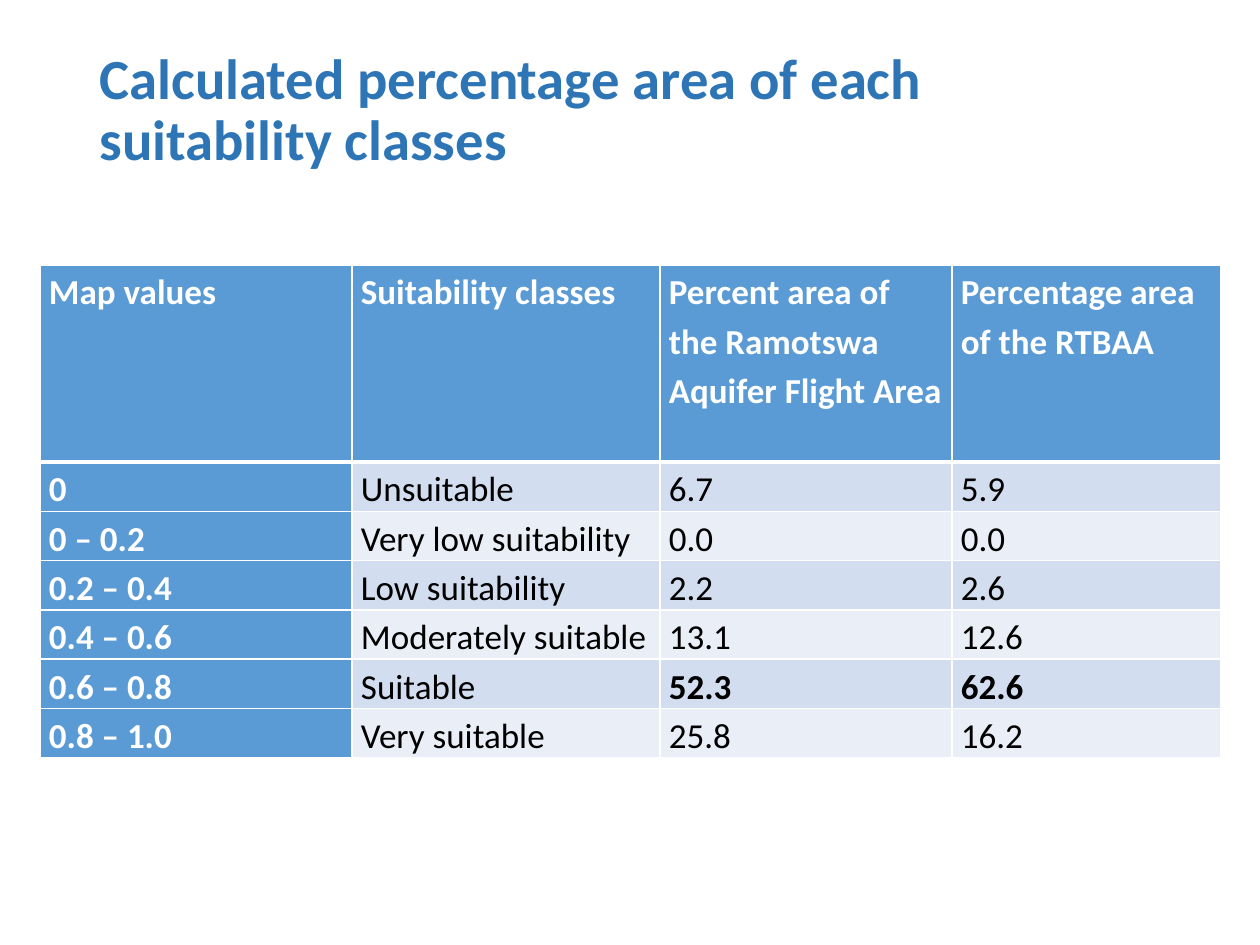
from lxml import etree
from pptx import Presentation
from pptx.dml.color import RGBColor
from pptx.enum import text
from pptx.oxml import ns
from pptx import util as u

# Content
TITLE = "Calculated percentage area of each suitability classes"
HEADER = ("Map values", "Suitability classes",
          "Percent area of the Ramotswa Aquifer Flight Area",
          "Percentage area of the RTBAA")
CLASSES = [
    ("0", "Unsuitable", "6.7", "5.9"),
    ("0 – 0.2", "Very low suitability", "0.0", "0.0"),
    ("0.2 – 0.4", "Low suitability", "2.2", "2.6"),
    ("0.4 – 0.6", "Moderately suitable", "13.1", "12.6"),
    ("0.6 – 0.8", "Suitable", "52.3", "62.6"),
    ("0.8 – 1.0", "Very suitable", "25.8", "16.2"),
]
BOLD_VALUES = {"52.3", "62.6"}

# Layout in px, 126 to the inch
SCALE = u.Inches(1) / 126
TITLE_BOX = (87, 50, 1086, 183)
TABLE_LEFT, TABLE_TOP = 40, 265
COLUMN_WIDTHS = (312, 308, 292, 269)
HEADER_HEIGHT, ROW_HEIGHT = 197, 49
CELL_MARGIN = 9

FONT = "Calibri"
TITLE_BLUE = RGBColor(0x2E, 0x75, 0xB6)
HEADER_BLUE = RGBColor(0x5B, 0x9B, 0xD5)
BANDS = (RGBColor(0xD2, 0xDE, 0xEF), RGBColor(0xEA, 0xEF, 0xF7))
WHITE = RGBColor(0xFF, 0xFF, 0xFF)
BLACK = RGBColor(0, 0, 0)


def px(length):
    return u.Emu(round(length * SCALE))


def set_format(target, values):
    for name, value in values.items():
        setattr(target, name, value)


def set_font(font, size, color, bold):
    set_format(font, {"name": FONT, "size": u.Pt(size), "bold": bold})
    font.color.rgb = color


def add_borders(cell, widths):
    properties = cell._tc.get_or_add_tcPr()
    for side, width in widths.items():
        line = etree.SubElement(properties, ns.qn(f"a:ln{side}"), w=str(u.Pt(width)))
        fill = etree.SubElement(line, ns.qn("a:solidFill"))
        etree.SubElement(fill, ns.qn("a:srgbClr"), val=str(WHITE))


def fill_cell(cell, content, row, column):
    is_header = row == 0
    is_label = is_header or column == 0
    add_borders(cell, {"L": 1, "R": 1, "T": 3 if row == 1 else 1,
                       "B": 3 if is_header else 1})
    cell.fill.solid()
    cell.fill.fore_color.rgb = HEADER_BLUE if is_label else BANDS[(row - 1) % 2]
    set_format(cell, {"margin_left": px(CELL_MARGIN), "margin_right": px(CELL_MARGIN),
                      "margin_top": 0, "margin_bottom": 0,
                      "vertical_anchor": text.MSO_ANCHOR.TOP})
    cell.text = content
    paragraph = cell.text_frame.paragraphs[0]
    wraps = is_header and column >= 2
    paragraph.alignment = text.PP_ALIGN.LEFT if wraps else text.PP_ALIGN.JUSTIFY
    paragraph.line_spacing = 1.15
    set_font(paragraph.runs[0].font, 20, WHITE if is_label else BLACK,
             is_label or content in BOLD_VALUES)


presentation = Presentation()
presentation.slide_width, presentation.slide_height = px(1260), px(945)
slide = presentation.slides.add_slide(presentation.slide_layouts.get_by_name("Title Only"))

# Title
title = slide.shapes.title
set_format(title, dict(zip(("left", "top", "width", "height"), map(px, TITLE_BOX))))
set_format(title.text_frame, {"text": TITLE, "word_wrap": True, "margin_top": 0,
                              "auto_size": text.MSO_AUTO_SIZE.NONE,
                              "vertical_anchor": text.MSO_ANCHOR.TOP})
heading = title.text_frame.paragraphs[0]
set_format(heading, {"alignment": text.PP_ALIGN.LEFT, "line_spacing": 0.9})
set_font(heading.runs[0].font, 32.4, TITLE_BLUE, True)

# Suitability table
rows = [HEADER] + CLASSES
heights = [HEADER_HEIGHT] + [ROW_HEIGHT] * len(CLASSES)
table = slide.shapes.add_table(
    len(rows), len(HEADER), px(TABLE_LEFT), px(TABLE_TOP),
    px(sum(COLUMN_WIDTHS)), px(sum(heights))).table
table.first_col = True
for column, width in zip(table.columns, COLUMN_WIDTHS):
    column.width = px(width)
for row, height in zip(table.rows, heights):
    row.height = px(height)
for r, values in enumerate(rows):
    for c, content in enumerate(values):
        fill_cell(table.cell(r, c), content, r, c)

presentation.save("out.pptx")
